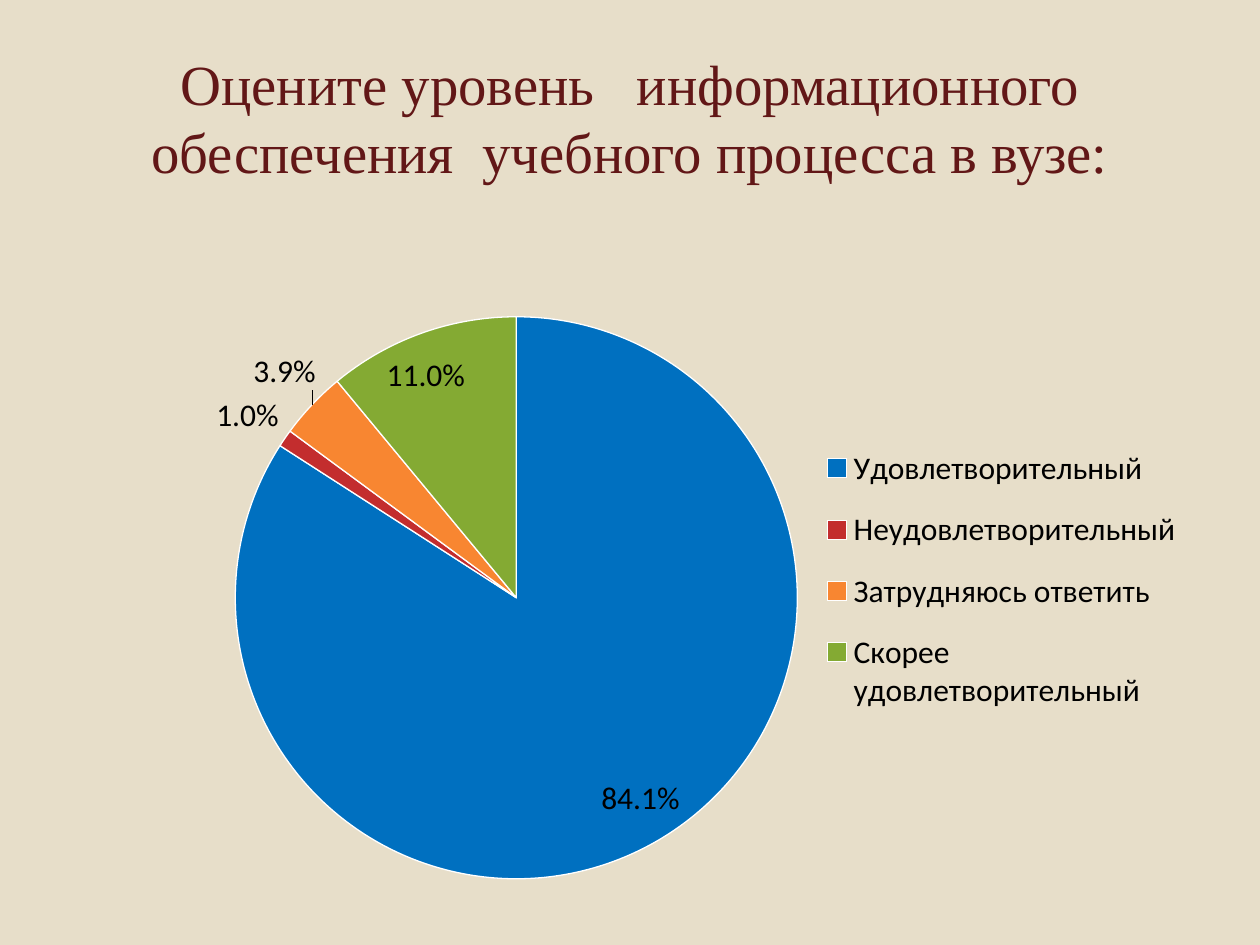
from lxml import etree
from pptx import Presentation
from pptx.chart.data import CategoryChartData
from pptx.dml.color import RGBColor
from pptx.enum import chart as charts, text
from pptx.oxml import ns
from pptx.util import Pt


def paint(fill, color):
    fill.solid()
    fill.fore_color.rgb = RGBColor.from_string(color)


def place(parent, before, target, x, y, width, height):
    for old in parent.findall(ns.qn("c:layout")):
        parent.remove(old)
    layout = etree.Element(ns.qn("c:layout"))
    manual = etree.SubElement(layout, ns.qn("c:manualLayout"))
    settings = [("layoutTarget", target), ("xMode", "edge"), ("yMode", "edge"),
                ("x", x), ("y", y), ("w", width), ("h", height)]
    for tag, value in settings:
        if value is not None:
            etree.SubElement(manual, ns.qn("c:" + tag)).set("val", str(value))
    parent.find(ns.qn(before)).addprevious(layout)


presentation = Presentation()
presentation.slide_width = Pt(720)
presentation.slide_height = Pt(540)
slide = presentation.slides.add_slide(presentation.slide_layouts[6])
paint(slide.background.fill, "E7DEC9")

title = slide.shapes.add_textbox(Pt(36), Pt(21.6), Pt(648), Pt(90))
title.text_frame.word_wrap = True
title.text_frame.vertical_anchor = text.MSO_ANCHOR.MIDDLE
paragraph = title.text_frame.paragraphs[0]
paragraph.text = "Оцените уровень   информационного обеспечения  учебного процесса в вузе:"
paragraph.alignment = text.PP_ALIGN.CENTER
paragraph.font.name = "Times New Roman"
paragraph.font.size = Pt(32.4)
paint(paragraph.font.fill, "621717")

answers = [
    ("Удовлетворительный", 84.1, "0070C0"),
    ("Неудовлетворительный", 1, "C32D2E"),
    ("Затрудняюсь ответить", 3.9, "F88631"),
    ("Скорее удовлетворительный", 11, "84AA33"),
]
data = CategoryChartData()
data.categories = [name for name, value, color in answers]
data.add_series("Series 1", [value for name, value, color in answers])
chart = slide.shapes.add_chart(charts.XL_CHART_TYPE.PIE, Pt(99.4), Pt(122.4),
                               Pt(584), Pt(417.6), data).chart
chart.has_title = False
chart.font.name = "Calibri"
chart.font.size = Pt(18)
paint(chart.font.fill, "000000")

plot = chart.plots[0]
plot.vary_by_categories = True
for index, (name, value, color) in enumerate(answers):
    slice_format = plot.series[0].points[index].format
    paint(slice_format.fill, color)
    paint(slice_format.line.fill, "FFFFFF")
    slice_format.line.width = Pt(0.75)

plot.has_data_labels = True
labels = plot.data_labels
labels.show_value = False
labels.show_percentage = True
labels.number_format = "0.0%"
labels.number_format_is_linked = False
labels.position = charts.XL_LABEL_POSITION.BEST_FIT

chart.has_legend = True
chart.legend.position = charts.XL_LEGEND_POSITION.RIGHT
chart.legend.include_in_layout = False
plot_area = chart.element.find(".//" + ns.qn("c:plotArea"))
legend = chart.element.find(".//" + ns.qn("c:legend"))
place(plot_area, "c:pieChart", "inner", 0.06, 0.14, 0.55, 0.77)
place(legend, "c:overlay", None, 0.63, 0.29, 0.36, 0.42)

presentation.save("out.pptx")
